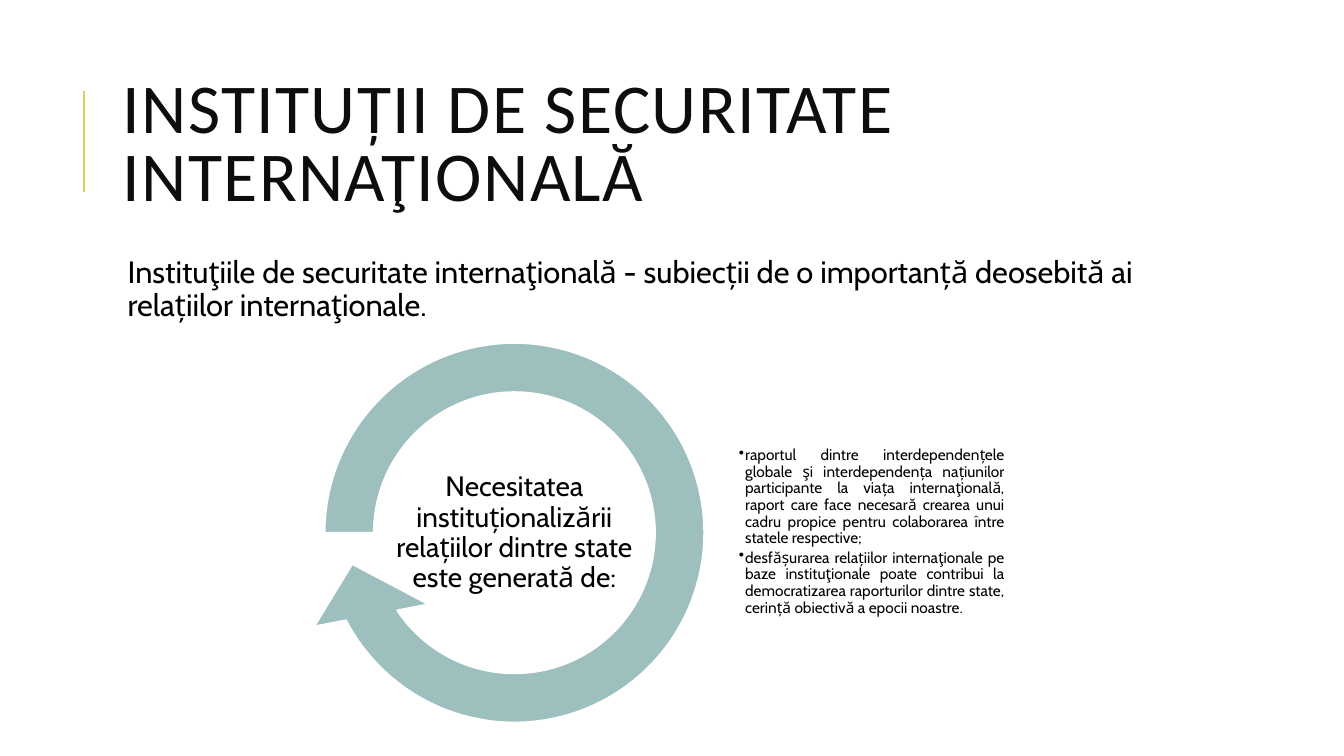
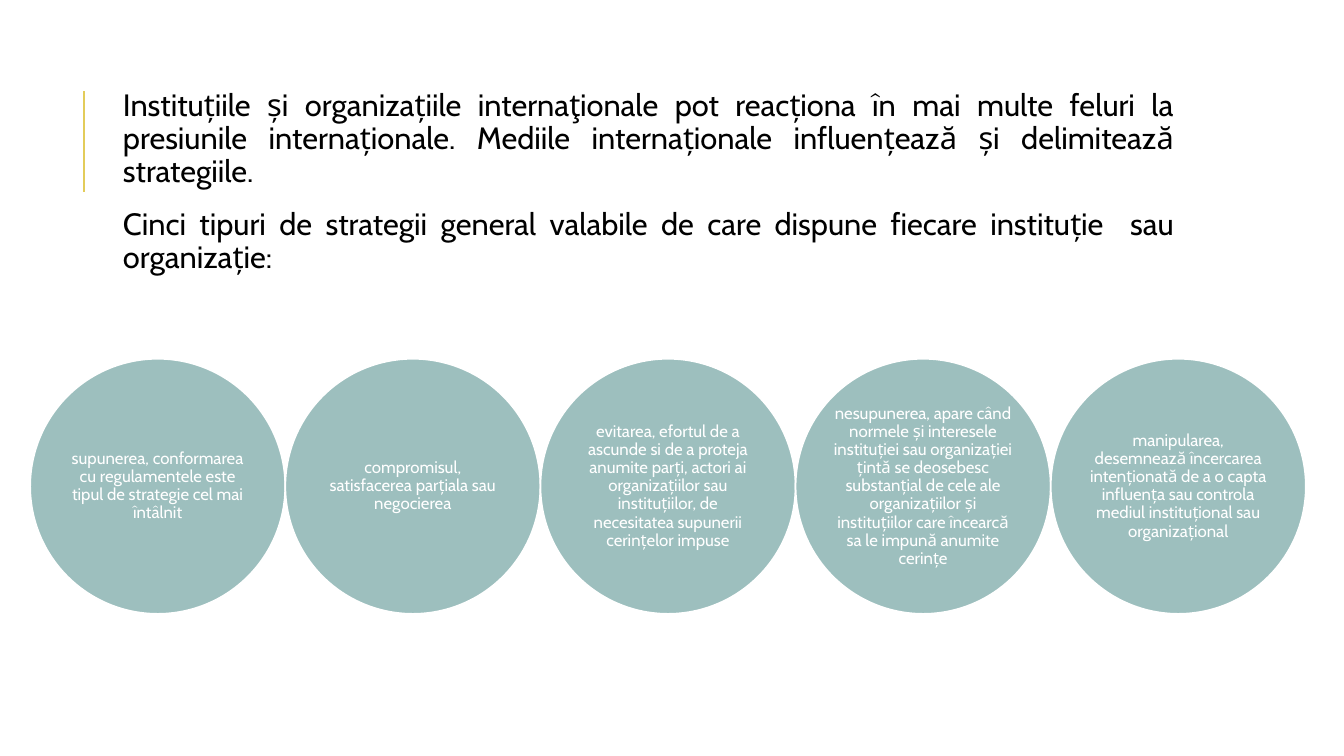
from lxml import etree
from pptx import Presentation
from pptx.dml.color import RGBColor
from pptx.enum.shapes import MSO_CONNECTOR, MSO_SHAPE
from pptx.enum.text import MSO_ANCHOR, MSO_AUTO_SIZE, PP_ALIGN
from pptx.oxml.ns import qn
from pptx.util import Cm, Pt

LEFT, CENTER, FULL = PP_ALIGN.LEFT, PP_ALIGN.CENTER, PP_ALIGN.JUSTIFY
TOP, MIDDLE = MSO_ANCHOR.TOP, MSO_ANCHOR.MIDDLE
STRAIGHT = MSO_CONNECTOR.STRAIGHT
RING, OVAL = MSO_SHAPE.CIRCULAR_ARROW, MSO_SHAPE.OVAL
FIXED = MSO_AUTO_SIZE.NONE

GOLD = RGBColor(0xE3, 0xCC, 0x5A)
TEAL = RGBColor(0x9D, 0xBF, 0xBE)
WHITE = RGBColor(0xFF, 0xFF, 0xFF)
BLACK = RGBColor(0, 0, 0)
INK = RGBColor(0x0D, 0x0D, 0x0D)

TITLE = "INSTITUȚII DE SECURITATE INTERNAŢIONALĂ"
INTRO = [
    "Instituţiile de securitate internaţională - subiecții de o importanță "
    "deosebită ai relațiilor internaţionale.",
]
NEED = ["Necesitatea instituționalizării relațiilor dintre state este generată de:"]
CAUSES = [
    "raportul dintre interdependențele globale şi interdependența națiunilor "
    "participante la viața internaţională, raport care face necesară crearea unui "
    "cadru propice pentru colaborarea între statele respective;",
    "desfășurarea relațiilor internaţionale pe baze instituţionale poate contribui la "
    "democratizarea raporturilor dintre state, cerință obiectivă a epocii noastre.",
]
CONTEXT = [
    "Instituțiile și organizațiile internaţionale pot reacționa în mai multe feluri la "
    "presiunile internaționale. Mediile internaționale influențează și delimitează "
    "strategiile.",
    "Cinci tipuri de strategii general valabile de care dispune fiecare instituție  sau "
    "organizație:",
]
PLANS = [
    "supunerea, conformarea cu regulamentele este tipul de strategie cel mai întâlnit",
    "compromisul, satisfacerea parțiala sau negocierea",
    "evitarea, efortul de a ascunde si de a proteja anumite parți, actori ai "
    "organizațiilor sau instituțiilor, de necesitatea supunerii cerințelor impuse",
    "nesupunerea, apare când normele și interesele instituției sau organizației țintă "
    "se deosebesc substanțial de cele ale organizațiilor și instituțiilor care încearcă "
    "sa le impună anumite cerințe",
    "manipularea, desemnează încercarea intenționată de a o capta influența sau "
    "controla mediul instituțional sau organizațional",
]

# Text styles: font, frame and paragraph values, insets and indents in cm
HEAD = dict(
    font=dict(name="Calibri", size=Pt(50), color=INK),
    frame=dict(vertical_anchor=MIDDLE),
    para=dict(alignment=LEFT, line_spacing=0.8),
    inset=0.25, track=1,
)
BODY = dict(
    font=dict(name="Cabin", size=Pt(22), color=BLACK),
    frame=dict(vertical_anchor=TOP),
    para=dict(alignment=LEFT, line_spacing=0.9, space_after=Pt(2)),
    inset=0.13, indent=0.25, before=12,
)
WIDE = BODY | dict(para=BODY["para"] | dict(alignment=FULL))
ITEM = dict(
    font=dict(name="Cabin", size=Pt(11), color=BLACK),
    frame=dict(vertical_anchor=MIDDLE),
    para=dict(alignment=FULL, line_spacing=0.9, space_after=Pt(2)),
    inset=0.03, indent=0.16, bullet="•",
)
CORE = dict(
    font=dict(name="Cabin", size=Pt(20), color=BLACK),
    frame=dict(vertical_anchor=MIDDLE),
    para=dict(alignment=CENTER, line_spacing=0.9),
    inset=0.03,
)
LABEL = CORE | dict(font=dict(name="Cabin", size=Pt(12), color=WHITE), inset=0)

RING_BENDS = (0.11, 11.42, 90, 108, 0.13)
DISC, DISC_LEFT, DISC_TOP = 6.43, 0.76, 9.04


def assign(target, values):
    for name, value in values.items():
        setattr(target, name, value)


def indent(para, style):
    """Set the left indent and, if the style has one, a hanging bullet."""
    props = para._p.get_or_add_pPr()
    width = Cm(style["indent"])
    props.set("marL", str(width))
    if "bullet" in style:
        props.set("indent", str(-width))
        mark = etree.SubElement(props, qn("a:buChar"))
        mark.set("char", style["bullet"])


def write(shape, texts, style):
    frame = shape.text_frame
    assign(frame, dict(word_wrap=True, auto_size=FIXED) | style["frame"])
    for side in ("left", "top", "right", "bottom"):
        inset = style["inset"] if side in ("left", "right") else style["inset"] / 2
        if style is not HEAD:
            inset = style["inset"]
        setattr(frame, "margin_" + side, Cm(inset))
    for pos, text in enumerate(texts):
        para = frame.paragraphs[0] if pos == 0 else frame.add_paragraph()
        if "indent" in style:
            indent(para, style)
        assign(para, style["para"])
        if pos and "before" in style:
            para.space_before = Pt(style["before"])
        run = para.add_run()
        run.text = text
        font = dict(style["font"])
        run.font.color.rgb = font.pop("color")
        assign(run.font, font)
        if "track" in style:
            run._r.get_or_add_rPr().set("spc", str(style["track"] * 100))


def add_text(slide, box, texts, style):
    write(slide.shapes.add_textbox(*map(Cm, box)), texts, style)


def add_form(slide, kind, left, top, size):
    """Add a teal shape of equal width and height with a white outline."""
    form = slide.shapes.add_shape(kind, Cm(left), Cm(top), Cm(size), Cm(size))
    form.shadow.inherit = False
    form.fill.solid()
    form.fill.fore_color.rgb = TEAL
    form.line.color.rgb = WHITE
    form.line.width = Pt(1.25)
    return form


def add_slide(deck, layout):
    """Add a slide with the gold rule at its left."""
    slide = deck.slides.add_slide(deck.slide_layouts[layout])
    rule = slide.shapes.add_connector(STRAIGHT, Cm(2.11), Cm(4.83), Cm(2.11), Cm(2.29))
    rule.line.color.rgb = GOLD
    rule.line.width = Pt(1.5)
    etree.SubElement(rule._element.spPr, qn("a:effectLst"))
    return slide


def add_need(deck):
    slide = add_slide(deck, 5)
    title = slide.shapes.title
    assign(title, dict(left=Cm(2.84), top=Cm(1.63), width=Cm(27), height=Cm(4.17)))
    write(title, [TITLE], HEAD)
    add_text(slide, (2.84, 6.35, 27, 2), INTRO, BODY)
    ring = add_form(slide, RING, 7.34, 7.8, 11.25)
    for pos, bend in enumerate(RING_BENDS):
        ring.adjustments[pos] = bend
    add_text(slide, (18.59, 11.15, 6.76, 4.5), CAUSES, ITEM)
    add_text(slide, (9.83, 11.86, 6.27, 3.15), NEED, CORE)


def add_plans(deck):
    slide = add_slide(deck, 6)
    add_text(slide, (2.72, 2.13, 27, 4.45), CONTEXT, WIDE)
    for pos, plan in enumerate(PLANS):
        disc = add_form(slide, OVAL, DISC_LEFT + pos * DISC, DISC_TOP, DISC)
        write(disc, [plan], LABEL)


def main():
    deck = Presentation()
    deck.slide_width, deck.slide_height = Cm(33.87), Cm(19.05)
    add_need(deck)
    add_plans(deck)
    deck.save("out.pptx")


if __name__ == "__main__":
    main()
